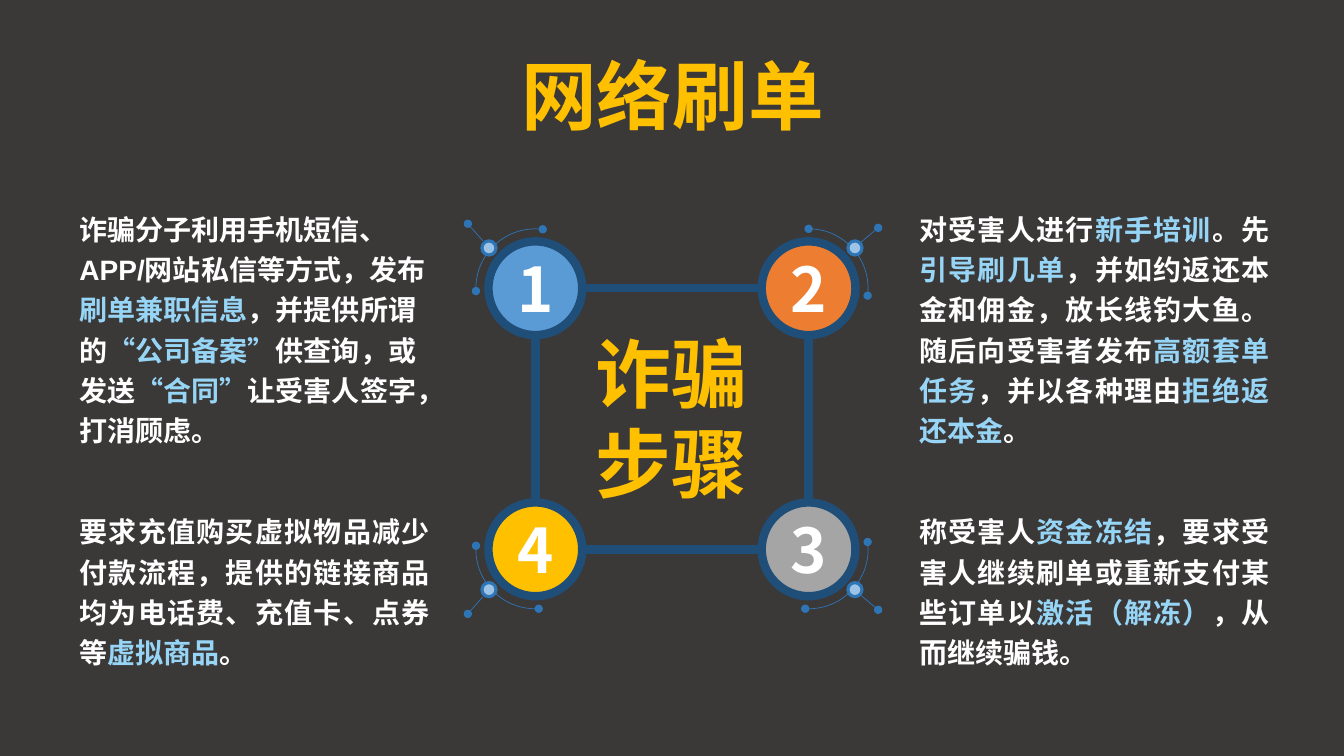
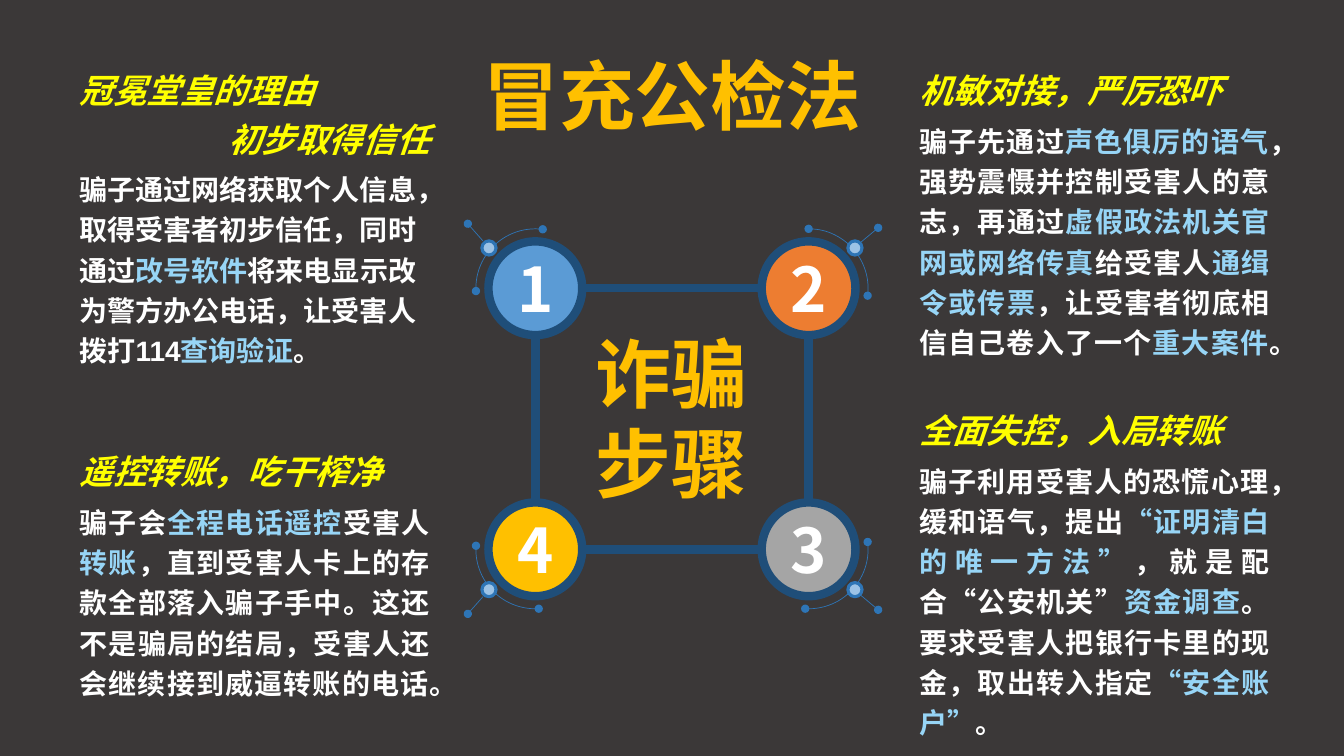
from lxml import etree
from pptx import Presentation
from pptx import util as u
from pptx.dml.color import RGBColor
from pptx.enum import shapes, text
from pptx.oxml.ns import qn

# Shared look
HUE = {"back": "3B3838", "gold": "FFC000", "white": "FFFFFF", "sky": "97D5F6",
       "yellow": "FFFF00", "navy": "1F4E79", "blue": "2E75B6", "pale": "9DC3E6",
       "one": "5B9BD5", "two": "ED7D31", "three": "A5A5A5"}
SANS, CJK = "Arial", "Noto Sans CJK SC"
LEFT, RIGHT, WIDE = 0.69, 9.02, 3.67
AL = text.PP_ALIGN
SIDE = {"l": AL.LEFT, "r": AL.RIGHT, "j": AL.JUSTIFY}

# Ring layout: wheel size, gaps between wheel centres
SIZE, ACROSS, DOWN = 0.93, 2.71, 2.59
# Number, fill, column, row, arc rotation, flips, arc angles
WHEELS = [("1", "one", 0, 0, 270, (), (160.41, 4.27)),
          ("2", "two", 1, 0, 0, (), (162, 4.27)),
          ("4", "gold", 0, 1, 0, ("flipH", "flipV"), (160.04, 2.06)),
          ("3", "three", 1, 1, 0, ("flipV",), (160.04, 4.27))]
# Whisker start and end, measured from the wheel centre, by column
WHISK = [(0.52, 0.47, 0.67, 0.64), (0.51, 0.45, 0.69, 0.6)]


def tint(hue):
    return RGBColor.from_string(HUE[hue])


def style(run, size, hue, face, slant=False):
    font = run.font
    font.size, font.bold, font.italic, font.name = u.Pt(size), True, slant, face
    font.color.rgb = tint(hue)
    east = etree.Element(qn("a:ea"), typeface=CJK)
    run._r.rPr.find(qn("a:latin")).addnext(east)


def shade(run):
    """Soft dark shadow behind large gold letters."""
    box = etree.Element(qn("a:effectLst"))
    cast = etree.SubElement(box, qn("a:outerShdw"), blurRad="38100", dist="38100",
                            dir="2700000", algn="tl")
    dark = etree.SubElement(cast, qn("a:srgbClr"), val="000000")
    etree.SubElement(dark, qn("a:alpha"), val="43000")
    run._r.rPr.find(qn("a:solidFill")).addnext(box)


def edge(item, hue, width, ends=()):
    item.line.color.rgb = tint(hue)
    item.line.width = u.Pt(width)
    for end in ends:
        etree.SubElement(item.line._get_or_add_ln(), qn("a:" + end), type="oval")


def line(slide, x1, y1, x2, y2, hue, width, ends=()):
    link = slide.shapes.add_connector(shapes.MSO_CONNECTOR.STRAIGHT,
                                      *map(u.Inches, (x1, y1, x2, y2)))
    edge(link, hue, width, ends)
    etree.SubElement(link._element.spPr, qn("a:effectLst"))


def disc(slide, x, y, size, fill, hue, width, kind="OVAL", ends=()):
    """Round shape centred on x, y."""
    item = slide.shapes.add_shape(shapes.MSO_SHAPE[kind], u.Inches(x - size / 2),
                                  u.Inches(y - size / 2), u.Inches(size), u.Inches(size))
    item.shadow.inherit = False
    if fill:
        item.fill.solid()
        item.fill.fore_color.rgb = tint(fill)
    else:
        item.fill.background()
    edge(item, hue, width, ends)
    return item


def frame(slide, x, y, w, h, wrap=True):
    body = slide.shapes.add_textbox(*map(u.Inches, (x, y, w, h))).text_frame
    body.word_wrap = wrap
    return body


def banner(slide, x, y, w, h, words):
    """Large gold lettering, one paragraph a line."""
    body = frame(slide, x, y, w, h, False)
    body.text = words
    for para in body.paragraphs:
        para.alignment = AL.CENTER
        para.line_spacing = u.Pt(64.5)
        style(para.runs[0], 54, "gold", CJK)
        shade(para.runs[0])


def note(slide, x, y, h, heads, paras):
    """Slanted heads, then body text; bars enclose highlighted words."""
    body = frame(slide, x, y, WIDE, h)
    rows = [(side, words, True) for side, words in heads]
    rows += [(side, words, False) for side, words in paras]
    for i, (side, words, head) in enumerate(rows):
        para = body.paragraphs[0] if i == 0 else body.add_paragraph()
        para.alignment = SIDE[side]
        para.line_spacing = u.Pt(34.4 if head else 28.8)
        if heads and i == len(heads):
            para.space_before = u.Pt(5)
        for j, part in enumerate(words.split("|")):
            run = para.add_run()
            run.text = part
            hue = "yellow" if head else ("white", "sky")[j % 2]
            style(run, 24 if head else 20, hue, SANS, head)


def wheel(slide, x, y, spec):
    """Numbered wheel with its arc, whisker and bead."""
    num, fill, col, row, turn, flips, angles = spec
    face = disc(slide, x, y, SIZE, fill, "navy", 6)
    body = face.text_frame
    body.text = num
    body.word_wrap = False
    body.vertical_anchor = text.MSO_ANCHOR.MIDDLE
    body.paragraphs[0].alignment = AL.CENTER
    style(body.paragraphs[0].runs[0], 44, "white", CJK)

    arc = disc(slide, x, y, 1.18, None, "blue", 0.5, "ARC", ("headEnd", "tailEnd"))
    arc.adjustments[0], arc.adjustments[1] = angles
    arc.rotation = turn
    for flip in flips:
        arc._element.spPr.find(qn("a:xfrm")).set(flip, "1")

    h, v = 2 * col - 1, 2 * row - 1
    x1, y1, x2, y2 = WHISK[col]
    line(slide, x + h * x1, y + v * y1, x + h * x2, y + v * y2, "blue", 0.5, ("tailEnd",))
    disc(slide, x + h * 0.46, y + v * 0.4, 0.14, "pale", "blue", 2.25)


def ring(slide, x, y):
    """Four linked wheels; x, y is the centre of the first."""
    half = SIZE / 2
    for k in (0, 1):
        top, side = y + k * DOWN, x + k * ACROSS
        line(slide, x + half, top, x + ACROSS - half, top, "navy", 6)
        line(slide, side, y + half, side, y + DOWN - half, "navy", 6)
    for spec in WHEELS:
        wheel(slide, x + spec[2] * ACROSS, y + spec[3] * DOWN, spec)
    banner(slide, x + 0.5, y + 0.34, 1.7, 1.92, "诈骗\n步骤")


def page(deck, title, notes):
    slide = deck.slides.add_slide(deck.slide_layouts[6])
    slide.background.fill.solid()
    slide.background.fill.fore_color.rgb = tint("back")
    banner(slide, 4.67, 0.44, 4, 1.01, title)
    ring(slide, 5.31, 2.86)
    for spec in notes:
        note(slide, *spec)


# Left, top, height, heads, paragraphs
ORDERS = [
    (LEFT, 1.99, 2.52, [], [
        ("l", "诈骗分子利用手机短信、APP/网站私信等方式，发布|刷单兼职信息|，并提供所谓的"
              "|“公司备案”|供查询，或发送|“合同”|让受害人签字，"),
        ("l", "打消顾虑。")]),
    (RIGHT, 1.99, 2.52, [], [
        ("j", "对受害人进行|新手培训|。先|引导刷几单|，并如约返还本金和佣金，放长线钓大鱼。"
              "随后向受害者发布|高额套单任务|，并以各种理由|拒绝返还本金|。")]),
    (RIGHT, 4.99, 1.72, [], [
        ("j", "称受害人|资金冻结|，要求受害人继续刷单或重新支付某些订单以|激活（解冻）|，"
              "从而继续骗钱。")]),
    (LEFT, 4.99, 1.72, [], [
        ("j", "要求充值购买虚拟物品减少付款流程，提供的链接商品均为电话费、充值卡、点券等"
              "|虚拟商品|。")]),
]
POLICE = [
    (LEFT, 0.57, 3.16, [("l", "冠冕堂皇的理由"), ("r", "初步取得信任")], [
        ("l", "骗子通过网络获取个人信息，取得受害者初步信任，同时通过|改号软件|将来电显示改为"
              "警方办公电话，让受害人拨打114|查询验证|。")]),
    (RIGHT, 0.57, 3.08, [("j", "机敏对接，严厉恐吓")], [
        ("j", "骗子先通过|声色俱厉的语气|，强势震慑并控制受害人的意志，再通过"
              "|虚假政法机关官网或网络传真|给受害人|通缉令或传票|，让受害者彻底相信自己卷入了"
              "一个|重大案件|。")]),
    (RIGHT, 3.94, 3.08, [("j", "全面失控，入局转账")], [
        ("j", "骗子利用受害人的恐慌心理，缓和语气，提出|“证明清白的唯一方法”|，就是配合"
              "“公安机关”|资金调查|。要求受害人把银行卡里的现金，取出转入指定|“安全账户”|。")]),
    (LEFT, 4.35, 2.67, [("j", "遥控转账，吃干榨净")], [
        ("j", "骗子会|全程电话遥控|受害人|转账|，直到受害人卡上的存款全部落入骗子手中。"
              "这还不是骗局的结局，受害人还会继续接到威逼转账的电话。")]),
]


def main():
    deck = Presentation()
    deck.slide_width, deck.slide_height = u.Inches(13.33), u.Inches(7.5)
    page(deck, "网络刷单", ORDERS)
    page(deck, "冒充公检法", POLICE)
    deck.save("out.pptx")


if __name__ == "__main__":
    main()
